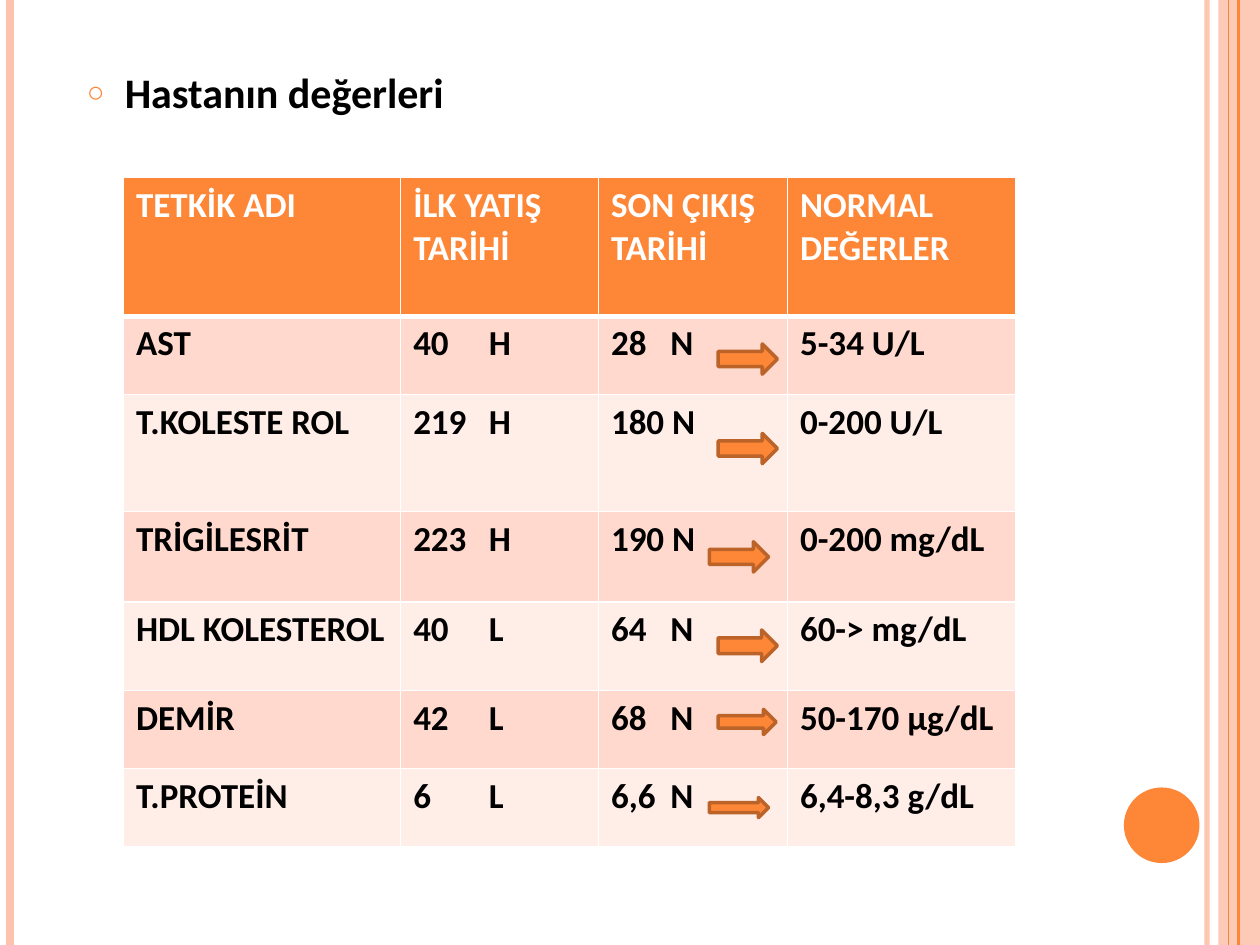
from lxml.etree import SubElement
from pptx import Presentation
from pptx.dml.color import RGBColor
from pptx.enum.shapes import MSO_CONNECTOR as Connector, MSO_SHAPE as Shape
from pptx.oxml import parse_xml
from pptx.oxml.ns import nsdecls, qn
from pptx.util import Inches, Pt

FONT = "Calibri"
ORANGE, PEACH, BROWN = "FE8637", "FEC3AE", "BC6329"
BLACK, WHITE = "000000", "FFFFFF"
BANDS = ("FFD9CE", "FFEDE8")

# x position, colour, width in points, opacity in percent
SIDE_LINES = [
    (9.58, PEACH, 3, 93),
    (0.08, PEACH, 4.5, 100),
    (9.83, ORANGE, 1.5, 100),
    (9.75, ORANGE, 0.75, 100),
]

COLUMN_WIDTHS = [2.2, 1.57, 1.5, 1.81]
ROW_HEIGHTS = [1.1, 0.62, 0.93, 0.72, 0.7, 0.62, 0.62]
FLAG_TABS = {1: 0.6, 2: 0.47}
LAB_RESULTS = [
    ("TETKİK ADI", "İLK YATIŞ TARİHİ", "SON ÇIKIŞ TARİHİ", "NORMAL DEĞERLER"),
    ("AST", "40\tH", "28\tN", "5-34 U/L"),
    ("T.KOLESTE ROL", "219\tH", "180 N", "0-200 U/L"),
    ("TRİGİLESRİT", "223\tH", "190 N", "0-200 mg/dL"),
    ("HDL KOLESTEROL", "40\tL", "64\tN", "60-> mg/dL"),
    ("DEMİR", "42\tL", "68\tN", "50-170 µg/dL"),
    ("T.PROTEİN", "6\tL", "6,6\tN", "6,4-8,3 g/dL"),
]

# left, top, width, height
RESULT_ARROWS = [
    (5.7, 2.73, 0.47, 0.24),
    (5.7, 3.44, 0.47, 0.24),
    (5.63, 4.3, 0.47, 0.24),
    (5.7, 5, 0.47, 0.25),
    (5.7, 5.63, 0.46, 0.2),
    (5.63, 6.33, 0.47, 0.16),
]


def rgb(color):
    return RGBColor.from_string(color)


def set_opacity(element, percent):
    if percent < 100:
        color = next(element.iter(qn("a:srgbClr")))
        SubElement(color, qn("a:alpha"), val=str(percent * 1000))


def add_side_line(slide, x, color, width, opacity):
    line = slide.shapes.add_connector(
        Connector.STRAIGHT, Inches(x), 0, Inches(x), Inches(7.5))
    line.line.color.rgb = rgb(color)
    line.line.width = Pt(width)
    properties = line._element.spPr
    set_opacity(properties, opacity)
    SubElement(properties, qn("a:effectLst"))


def add_filled_shape(slide, kind, box, fill, outline=None, opacity=100):
    shape = slide.shapes.add_shape(kind, *map(Inches, box))
    shape.shadow.inherit = False
    shape.fill.solid()
    shape.fill.fore_color.rgb = rgb(fill)
    set_opacity(shape._element.spPr, opacity)
    if outline:
        shape.line.color.rgb = rgb(outline)
        shape.line.width = Pt(2)
    else:
        shape.line.fill.background()


def add_bold_run(paragraph, text, size, color):
    run = paragraph.add_run()
    run.text = text
    run.font.name = FONT
    run.font.size = Pt(size)
    run.font.bold = True
    run.font.color.rgb = rgb(color)


def set_ring_bullet(paragraph):
    properties = paragraph._p.get_or_add_pPr()
    properties.set("marL", str(Inches(0.3)))
    properties.set("indent", str(-Inches(0.3)))
    bullet_color = SubElement(properties, qn("a:buClr"))
    SubElement(bullet_color, qn("a:srgbClr"), val=ORANGE)
    SubElement(properties, qn("a:buSzPct"), val="70000")
    SubElement(properties, qn("a:buChar"), char="○")


def fill_heading(slide):
    slide.shapes.title._element.getparent().remove(slide.shapes.title._element)
    body = slide.placeholders[1]
    body.left, body.top, body.width, body.height = map(
        Inches, (0.59, 0.48, 8.17, 5.33))
    heading = body.text_frame.paragraphs[0]
    set_ring_bullet(heading)
    heading.space_before = Pt(6)
    add_bold_run(heading, "Hastanın değerleri", 24, BLACK)


def set_tab(paragraph, position):
    tabs = SubElement(paragraph._p.get_or_add_pPr(), qn("a:tabLst"))
    SubElement(tabs, qn("a:tab"), pos=str(Inches(position)), algn="l")


def set_borders(cell, row):
    """White 1 pt borders, with a 3 pt rule between header and body."""
    widths = {"L": 1, "R": 1, "T": 3 if row == 1 else 1, "B": 3 if row == 0 else 1}
    properties = cell._tc.get_or_add_tcPr()
    for position, (side, width) in enumerate(widths.items()):
        properties.insert(position, parse_xml(
            f'<a:ln{side} {nsdecls("a")} w="{Pt(width)}"><a:solidFill>'
            f'<a:srgbClr val="{WHITE}"/></a:solidFill></a:ln{side}>'))


def add_results_table(slide):
    table = slide.shapes.add_table(
        len(ROW_HEIGHTS), len(COLUMN_WIDTHS), Inches(0.98), Inches(1.41),
        Inches(sum(COLUMN_WIDTHS)), Inches(sum(ROW_HEIGHTS))).table
    for column, width in zip(table.columns, COLUMN_WIDTHS):
        column.width = Inches(width)
    for table_row, height in zip(table.rows, ROW_HEIGHTS):
        table_row.height = Inches(height)
    for row, results in enumerate(LAB_RESULTS):
        for col, text in enumerate(results):
            cell = table.cell(row, col)
            cell.fill.solid()
            cell.fill.fore_color.rgb = rgb(BANDS[(row - 1) % 2] if row else ORANGE)
            set_borders(cell, row)
            paragraph = cell.text_frame.paragraphs[0]
            if "\t" in text:
                set_tab(paragraph, FLAG_TABS[col])
            add_bold_run(paragraph, text, 20, BLACK if row else WHITE)


def main():
    prs = Presentation()
    prs.slide_width, prs.slide_height = Inches(10), Inches(7.5)
    slide = prs.slides.add_slide(prs.slide_layouts[1])

    add_filled_shape(slide, Shape.RECTANGLE, (9.67, 0, 0.33, 7.5), PEACH, opacity=87)
    for side_line in SIDE_LINES:
        add_side_line(slide, *side_line)
    add_filled_shape(slide, Shape.OVAL, (8.92, 6.25, 0.6, 0.6), ORANGE)

    fill_heading(slide)
    add_results_table(slide)
    for box in RESULT_ARROWS:
        add_filled_shape(slide, Shape.RIGHT_ARROW, box, ORANGE, outline=BROWN)

    prs.save("out.pptx")


if __name__ == "__main__":
    main()
